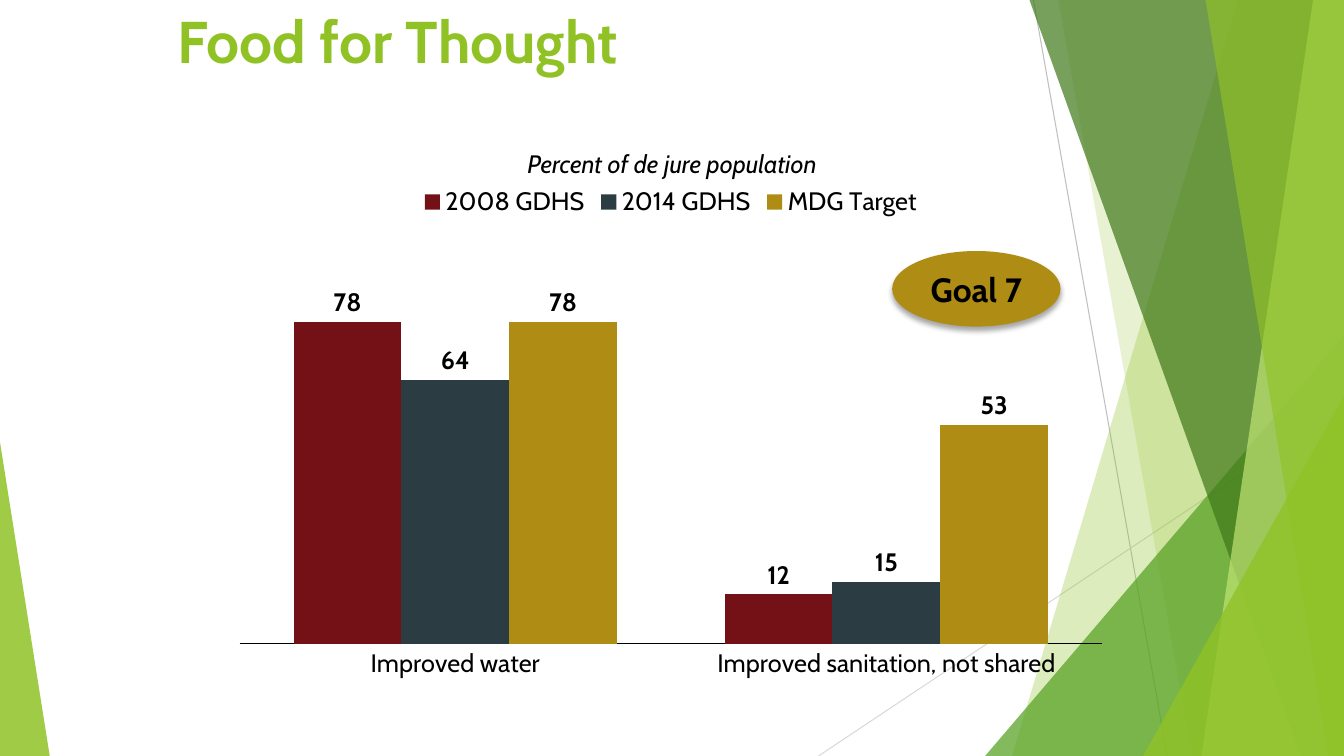
from lxml import etree
from pptx import Presentation
from pptx.chart.data import CategoryChartData
from pptx.dml.color import RGBColor
from pptx.enum.chart import XL_CHART_TYPE, XL_LABEL_POSITION, XL_LEGEND_POSITION, XL_TICK_LABEL_POSITION, XL_TICK_MARK
from pptx.enum.shapes import MSO_CONNECTOR, MSO_SHAPE
from pptx.enum.text import MSO_ANCHOR, PP_ALIGN
from pptx.oxml import parse_xml
from pptx.oxml.ns import nsdecls, qn
from pptx.util import Inches, Pt

COLUMNS = XL_CHART_TYPE.COLUMN_CLUSTERED
OUTSIDE_END = XL_LABEL_POSITION.OUTSIDE_END
LEGEND_TOP = XL_LEGEND_POSITION.TOP
NO_LABELS = XL_TICK_LABEL_POSITION.NONE
NO_TICKS = XL_TICK_MARK.NONE
STRAIGHT = MSO_CONNECTOR.STRAIGHT
TRIANGLE, OVAL = MSO_SHAPE.ISOSCELES_TRIANGLE, MSO_SHAPE.OVAL
TOP, MIDDLE = MSO_ANCHOR.TOP, MSO_ANCHOR.MIDDLE
LEFT, CENTER = PP_ALIGN.LEFT, PP_ALIGN.CENTER

BLACK = RGBColor(0x00, 0x00, 0x00)
GRAY = RGBColor(0xBF, 0xBF, 0xBF)
LIGHT_GRAY = RGBColor(0xD9, 0xD9, 0xD9)
LIME = RGBColor(0x90, 0xC2, 0x26)
GREEN = RGBColor(0x54, 0xA0, 0x21)
DARK_GREEN = RGBColor(0x3F, 0x78, 0x19)
PALE_LIME = RGBColor(0xC0, 0xE4, 0x74)
MAROON = RGBColor(0x74, 0x11, 0x16)
SLATE = RGBColor(0x2C, 0x3C, 0x43)
GOLD = RGBColor(0xAF, 0x8C, 0x14)

FONT = "Cabin"
WIDTH, HEIGHT = Inches(13.333), Inches(7.5)
CATEGORIES = ["Improved water", "Improved sanitation, not shared"]
SERIES = [
    ("2008 GDHS", (78, 12), MAROON),
    ("2014 GDHS", (64, 15), SLATE),
    ("MDG Target", (78, 53), GOLD),
]


def across(percent):
    """Return a percentage of the slide width."""
    return round(WIDTH * percent / 100)


def down(percent):
    """Return a percentage of the slide height."""
    return round(HEIGHT * percent / 100)


def box(left, top, width, height):
    """Convert a box in percent of the slide to lengths."""
    return across(left), down(top), across(width), down(height)


def style_font(font, size, color=BLACK, bold=False, italic=False):
    """Set the typeface, size, colour and style of a font."""
    font.name, font.size = FONT, Pt(size)
    font.bold, font.italic = bold, italic
    font.color.rgb = color


def fill_shape(sp, color, opacity=100):
    """Give a shape a plain fill with no outline or shadow."""
    sp.shadow.inherit = False
    sp.line.fill.background()
    sp.fill.solid()
    sp.fill.fore_color.rgb = color
    if opacity < 100:
        clr = sp.fill._xPr.find(".//" + qn("a:srgbClr"))
        etree.SubElement(clr, qn("a:alpha"), val=str(opacity * 1000))


def write(sp, text, size, align, anchor, **style):
    """Write one styled line of text into a shape."""
    tf = sp.text_frame
    tf.word_wrap, tf.vertical_anchor = True, anchor
    p = tf.paragraphs[0]
    p.alignment = align
    r = p.add_run()
    r.text = text
    style_font(r.font, size, **style)


def add_text(s, bounds, *text, **style):
    """Add a text box with one line of text."""
    write(s.shapes.add_textbox(*box(*bounds)), *text, **style)


def add_hairline(s, x1, y1, x2, y2, color):
    """Add a thin straight line between two points."""
    line = s.shapes.add_connector(STRAIGHT, across(x1), down(y1), across(x2), down(y2))
    line.line.color.rgb, line.line.width = color, Pt(0.75)
    etree.SubElement(line._element.spPr, qn("a:effectLst"))


def add_facet(s, top_x, bottom_x, color, opacity):
    """Add a full-height facet from a slanted edge to the right side."""
    outline = s.shapes.build_freeform(across(top_x), 0)
    outline.add_line_segments([(WIDTH, 0), (WIDTH, HEIGHT), (across(bottom_x), HEIGHT)])
    fill_shape(outline.convert_to_shape(), color, opacity)


def add_corner(s, left, top, width, apex, color, opacity):
    """Add a right triangle standing on the bottom edge."""
    sp = s.shapes.add_shape(TRIANGLE, *box(left, top, width, 100 - top))
    sp.adjustments[0] = apex
    fill_shape(sp, color, opacity)


def add_backdrop(s):
    """Add the green facets and hairlines from back to front."""
    add_hairline(s, 76.9, 0, 86.85, 100, GRAY)
    add_hairline(s, 100, 53.7, 60.9, 100, LIGHT_GRAY)
    add_facet(s, 92.1, 75.3, LIME, 30)
    add_facet(s, 78.75, 88.7, LIME, 20)
    add_corner(s, 73.3, 44.4, 26.7, 1, GREEN, 72)
    add_facet(s, 76.6, 96.8, DARK_GREEN, 70)
    add_facet(s, 97.7, 89.4, PALE_LIME, 70)
    add_facet(s, 89.7, 98.85, LIME, 65)
    add_corner(s, 85.05, 52.4, 14.95, 1, LIME, 80)
    add_corner(s, 0, 58.5, 3.7, 0, LIME, 85)


def set_plot_area(chart, **shares):
    """Fix the inner plot area in shares of the chart."""
    modes = '<c:layoutTarget val="inner"/><c:xMode val="edge"/><c:yMode val="edge"/>'
    sizes = "".join(f'<c:{key} val="{val}"/>' for key, val in shares.items())
    plot_area = chart._chartSpace.chart.plotArea
    for layout in plot_area.findall(qn("c:layout")):
        plot_area.remove(layout)
    plot_area.insert(0, parse_xml(
        f'<c:layout {nsdecls("c")}><c:manualLayout>{modes}{sizes}</c:manualLayout></c:layout>'))


def add_columns(s, bounds):
    """Add the clustered column chart of water and sanitation."""
    data = CategoryChartData()
    data.categories = CATEGORIES
    for name, values, _ in SERIES:
        data.add_series(name, values)
    chart = s.shapes.add_chart(COLUMNS, *box(*bounds), data).chart
    style_font(chart.font, 10)
    chart.has_title = False
    chart.has_legend = True
    chart.legend.position, chart.legend.include_in_layout = LEGEND_TOP, False
    style_font(chart.legend.font, 18)

    cat_axis, val_axis = chart.category_axis, chart.value_axis
    cat_axis.major_tick_mark = NO_TICKS
    cat_axis.format.line.color.rgb, cat_axis.format.line.width = BLACK, Pt(0.75)
    style_font(cat_axis.tick_labels.font, 18)
    val_axis.minimum_scale, val_axis.maximum_scale = 0, 100
    val_axis.has_major_gridlines = False
    val_axis.tick_label_position = NO_LABELS
    val_axis.visible = False

    plot = chart.plots[0]
    plot.gap_width, plot.overlap, plot.vary_by_categories = 100, 0, False
    for series, (_, _, color) in zip(plot.series, SERIES):
        series.format.fill.solid()
        series.format.fill.fore_color.rgb = color
        labels = series.data_labels
        labels.show_value, labels.position = True, OUTSIDE_END
        style_font(labels.font, 18, bold=True)
    set_plot_area(chart, x=0.02, y=0.11, w=0.96, h=0.8)


def add_badge(s, bounds, text):
    """Add a gold oval with a soft shadow and a bold label."""
    sp = s.shapes.add_shape(OVAL, *box(*bounds))
    fill_shape(sp, GOLD)
    effects = sp._element.spPr.find(qn("a:effectLst"))
    effects.append(parse_xml(
        f'<a:outerShdw {nsdecls("a")} blurRad="{Pt(4)}" dist="{Pt(3)}" dir="5400000" rotWithShape="0">'
        '<a:srgbClr val="000000"><a:alpha val="35000"/></a:srgbClr></a:outerShdw>'))
    write(sp, text, 24, CENTER, MIDDLE, bold=True)


def main():
    """Build the slide and save it."""
    prs = Presentation()
    prs.slide_width, prs.slide_height = WIDTH, HEIGHT
    s = prs.slides.add_slide(prs.slide_layouts[6])
    add_backdrop(s)
    add_text(s, (12.5, 0, 75, 19.33), "Food for Thought", 42, LEFT, TOP, color=LIME, bold=True)
    add_columns(s, (16.5, 23.07, 66.83, 68.27))
    add_text(s, (12.5, 18.93, 75, 5.33), "Percent of de jure population", 18, CENTER, TOP, italic=True)
    add_badge(s, (66.38, 33.2, 12.53, 10), "Goal 7")
    prs.save("out.pptx")


if __name__ == "__main__":
    main()
